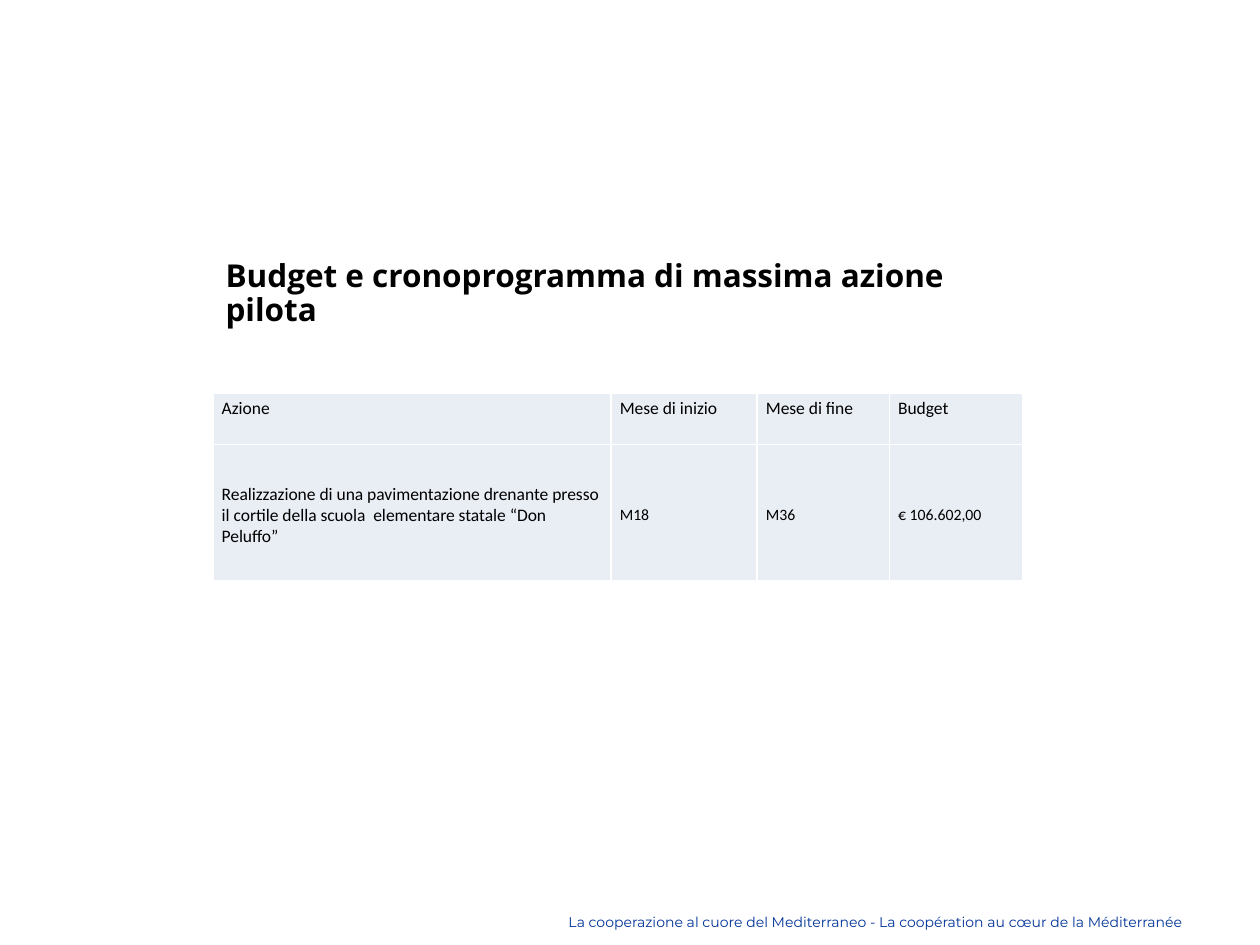
from lxml.etree import SubElement
from pptx import Presentation
from pptx.dml.color import RGBColor
from pptx.enum.text import MSO_ANCHOR, PP_ALIGN
from pptx.oxml.ns import qn
from pptx.util import Pt

# Content
TITLE = "Budget e cronoprogramma di massima azione pilota"
FOOTER = ("La cooperazione al cuore del Mediterraneo - "
          "La coopération au cœur de la Méditerranée")
ROWS = [
    ("Azione", "Mese di inizio", "Mese di fine", "Budget"),
    ("Realizzazione di una pavimentazione drenante presso il cortile "
     "della scuola  elementare statale “Don Peluffo”",
     "M18", "M36", "€ 106.602,00"),
]

# Look
BLACK = RGBColor(0, 0, 0)
WHITE = RGBColor(255, 255, 255)
BLUE = RGBColor(0x00, 0x33, 0x99)
PALE = RGBColor(0xE9, 0xED, 0xF4)
LEFT = 121.7
WIDTHS = (227.5, 83.5, 75.6, 76.3)
HEIGHTS = (29.5, 77.8)


def write(frame, text, size, font="Calibri", color=BLACK, bold=False,
          align=PP_ALIGN.LEFT, space=None):
    para = frame.paragraphs[0]
    para.alignment = align
    para.line_spacing = space
    run = para.add_run()
    run.text = text
    run.font.size = Pt(size)
    run.font.name = font
    run.font.bold = bold
    run.font.color.rgb = color


def place(shape, left, top, width, height):
    shape.left, shape.top = Pt(left), Pt(top)
    shape.width, shape.height = Pt(width), Pt(height)


def edge(cell):
    props = cell._tc.get_or_add_tcPr()
    for n, side in enumerate(("lnL", "lnR", "lnT", "lnB")):
        line = props.makeelement(qn(f"a:{side}"), {"w": str(Pt(1))})
        props.insert(n, line)
        fill = SubElement(line, qn("a:solidFill"))
        SubElement(fill, qn("a:srgbClr"), val=str(WHITE))


deck = Presentation()
deck.slide_width, deck.slide_height = Pt(720), Pt(540)
slide = deck.slides.add_slide(deck.slide_layouts[5])

# Footer
foot = slide.shapes.add_textbox(Pt(303.1), Pt(518.4), Pt(380.2), Pt(17.3))
foot.text_frame.word_wrap = True
foot.text_frame.vertical_anchor = MSO_ANCHOR.MIDDLE
write(foot.text_frame, FOOTER, 8, font="Montserrat", color=BLUE,
      align=PP_ALIGN.RIGHT)

# Title
title = slide.shapes.title
place(title, LEFT, 145.4, 472.3, 51)
title.text_frame.word_wrap = True
title.text_frame.vertical_anchor = MSO_ANCHOR.TOP
write(title.text_frame, TITLE, 18, font="Open Sans", bold=True, space=0.9)

# Budget table
table = slide.shapes.add_table(
    len(ROWS), len(WIDTHS), Pt(LEFT), Pt(224.6),
    Pt(sum(WIDTHS)), Pt(sum(HEIGHTS))).table
for col, width in zip(table.columns, WIDTHS):
    col.width = Pt(width)
for r, (row, height) in enumerate(zip(ROWS, HEIGHTS)):
    table.rows[r].height = Pt(height)
    for c, text in enumerate(row):
        cell = table.cell(r, c)
        cell.fill.solid()
        cell.fill.fore_color.rgb = PALE
        edge(cell)
        cell.margin_left = cell.margin_right = Pt(5)
        cell.margin_top, cell.margin_bottom = Pt(3), Pt(0)
        cell.vertical_anchor = MSO_ANCHOR.MIDDLE if r else MSO_ANCHOR.TOP
        write(cell.text_frame, text, 9 if r and c else 10)

deck.save("out.pptx")
